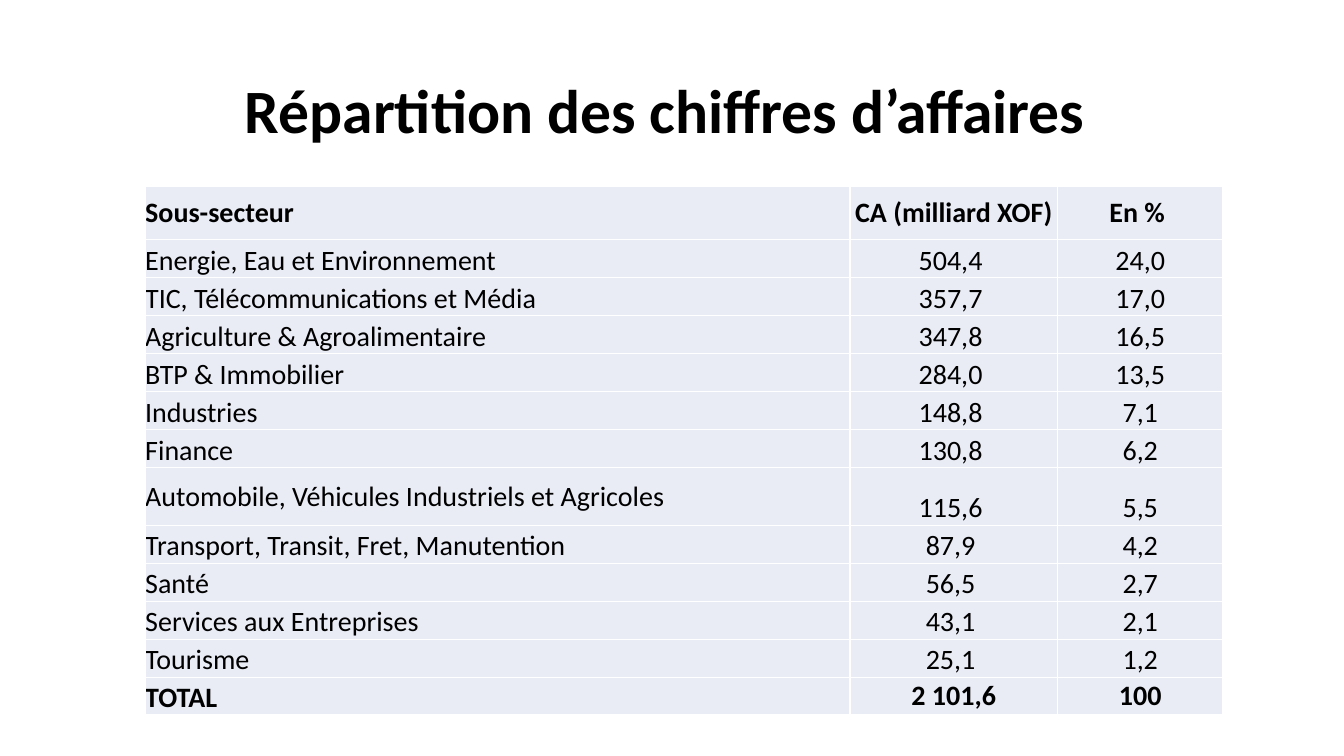
from lxml import etree
from pptx import Presentation
from pptx import util as u
from pptx.dml.color import RGBColor
from pptx.enum import text
from pptx.oxml import ns


def color(value):
    return RGBColor.from_string(value)


def write(frame, words, size, bold, align):
    para = frame.paragraphs[0]
    para.alignment = align
    span = para.add_run()
    span.text = words
    span.font.color.rgb = color("000000")
    font_format = {"name": "Calibri", "size": u.Pt(size), "bold": bold}
    for name, value in font_format.items():
        setattr(span.font, name, value)
    return para


LEFT, CENTER = text.PP_ALIGN.LEFT, text.PP_ALIGN.CENTER
MIDDLE, BOTTOM = text.MSO_ANCHOR.MIDDLE, text.MSO_ANCHOR.BOTTOM

deck = Presentation()
deck.slide_width = u.Inches(13.33)
deck.slide_height = u.Inches(7.5)
page = deck.slides.add_slide(deck.slide_layouts[6])

title = page.shapes.add_textbox(u.Inches(0.92), u.Inches(0.4), u.Inches(11.5), u.Inches(1.45))
title.text_frame.word_wrap = True
title.text_frame.vertical_anchor = MIDDLE
heading = write(title.text_frame, "Répartition des chiffres d’affaires ", 44, True, CENTER)
heading.line_spacing = 0.9

sectors = [
    ("Sous-secteur", "CA (milliard XOF)", "En % "),
    ("Energie, Eau et Environnement", "504,4 ", "24,0"),
    ("TIC, Télécommunications et Média", "357,7 ", "17,0"),
    ("Agriculture & Agroalimentaire", "347,8 ", "16,5"),
    ("BTP & Immobilier", "284,0 ", "13,5"),
    ("Industries", "148,8 ", "7,1"),
    ("Finance", "130,8 ", "6,2"),
    ("Automobile, Véhicules Industriels et Agricoles", "115,6 ", "5,5"),
    ("Transport, Transit, Fret, Manutention", "87,9 ", "4,2"),
    ("Santé", "56,5 ", "2,7"),
    ("Services aux Entreprises", "43,1 ", "2,1"),
    ("Tourisme", "25,1 ", "1,2"),
    ("TOTAL", "2 101,6", "100"),
]
header_row, total_row, automobile_row = 0, len(sectors) - 1, 7
tall_rows = {header_row: 0.53, automobile_row: 0.57}
middle_cells = {(header_row, 0), (header_row, 1), (header_row, 2),
                (automobile_row, 0), (total_row, 1), (total_row, 2)}

table = page.shapes.add_table(len(sectors), 3, u.Inches(1.44), u.Inches(1.85),
                              u.Inches(10.69), u.Inches(5.25)).table
for column, width in zip(table.columns, (6.99, 2.06, 1.64)):
    column.width = u.Inches(width)

for row_index, sector in enumerate(sectors):
    table.rows[row_index].height = u.Inches(tall_rows.get(row_index, 0.377))
    for column_index, words in enumerate(sector):
        cell = table.cell(row_index, column_index)
        cell_format = {
            "margin_left": 0, "margin_right": 0, "margin_top": 0, "margin_bottom": 0,
            "vertical_anchor": MIDDLE if (row_index, column_index) in middle_cells else BOTTOM,
        }
        for name, value in cell_format.items():
            setattr(cell, name, value)
        properties = cell._tc.get_or_add_tcPr()
        for side in ("a:lnL", "a:lnR", "a:lnT", "a:lnB"):
            border = etree.SubElement(properties, ns.qn(side), w=str(u.Pt(1)))
            paint = etree.SubElement(border, ns.qn("a:solidFill"))
            etree.SubElement(paint, ns.qn("a:srgbClr"), val="FFFFFF")
        cell.fill.solid()
        cell.fill.fore_color.rgb = color("E9EBF5")
        write(cell.text_frame, words, 20, row_index in (header_row, total_row),
              CENTER if column_index else LEFT)

deck.save("out.pptx")
